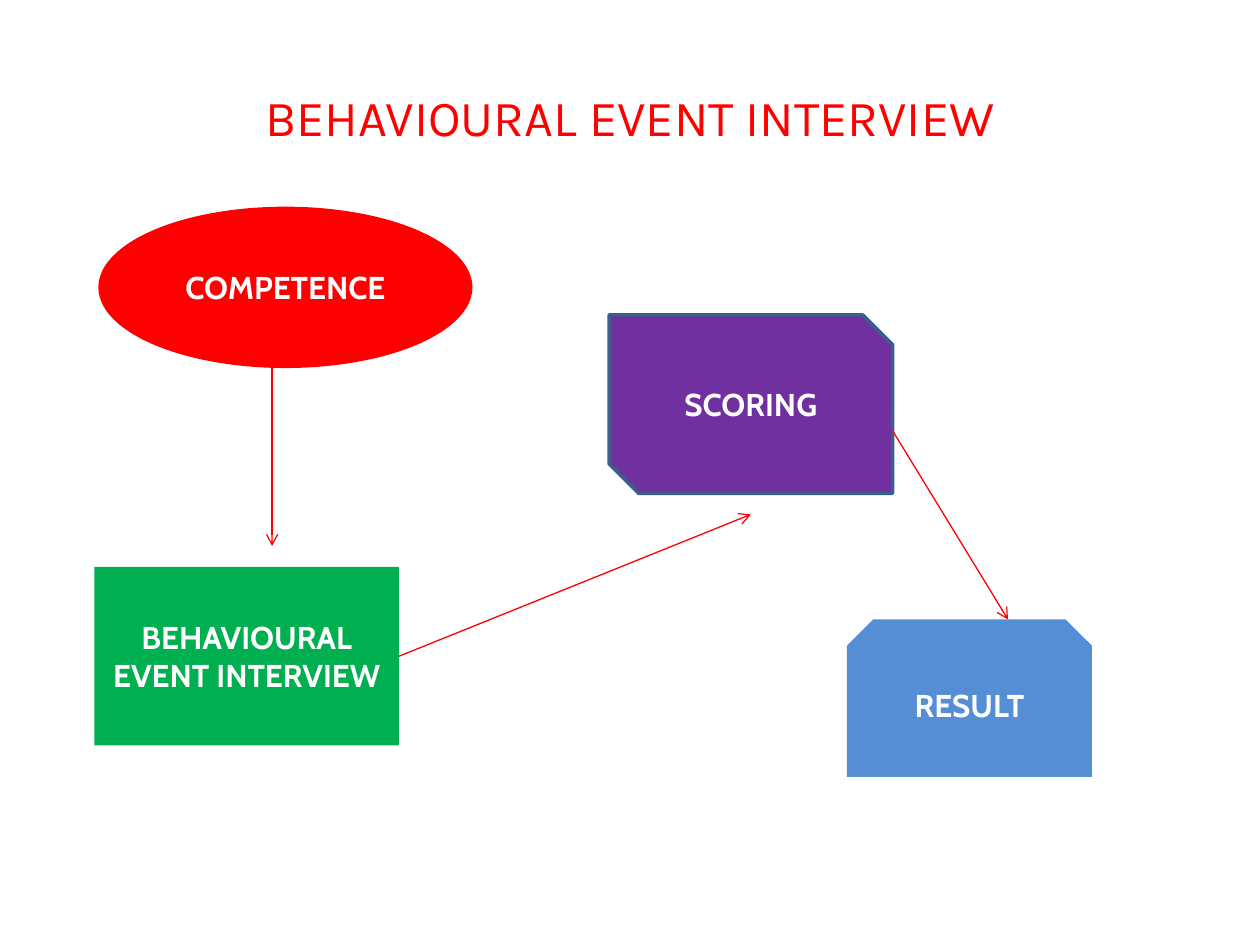
"""Build the behavioural event interview flow slide."""
from lxml import etree
from pptx import Presentation
from pptx.dml.color import RGBColor
from pptx.enum.shapes import MSO_CONNECTOR, MSO_SHAPE
from pptx.enum.text import MSO_ANCHOR, PP_ALIGN
from pptx.oxml.ns import qn
from pptx.util import Pt

LINE = MSO_CONNECTOR.STRAIGHT
OVAL, RECT = MSO_SHAPE.OVAL, MSO_SHAPE.RECTANGLE
DIAG, SNIP = MSO_SHAPE.SNIP_2_DIAG_RECTANGLE, MSO_SHAPE.SNIP_2_SAME_RECTANGLE
MIDDLE, CENTER = MSO_ANCHOR.MIDDLE, PP_ALIGN.CENTER
RIGHT = 3

THEME = {
    "red": "FF0000", "green": "00B050", "purple": "7030A0",
    "blue": "558ED5", "edge": "3A5F8C", "white": "FFFFFF",
    "title": {"name": "Karla", "size": Pt(28.8), "bold": False},
    "label": {"name": "Cabin", "size": Pt(18), "bold": True},
    "arrow": 0.75, "border": 2,
}

SIZE = (720, 540)
TITLE = ("BEHAVIOURAL EVENT INTERVIEW", (36, 21.6, 648, 90))
STEPS = [
    ("COMPETENCE", OVAL, (56.2, 118.1, 213.8, 92.2), "red", None),
    ("BEHAVIOURAL EVENT INTERVIEW", RECT, (54, 324, 174, 102), "green", None),
    ("SCORING", DIAG, (348, 180, 162, 102), "purple", "edge"),
    ("RESULT", SNIP, (484, 354, 140, 90), "blue", None),
]
ARROWS = [
    ((155.5, 210), (155.5, 312), None),
    ((228, 375), (429, 294), 1),
    ((510, 246), (576, 354), None),
]


def tint(name):
    return RGBColor.from_string(THEME[name])


def write(shape, text, style, color):
    frame = shape.text_frame
    frame.word_wrap = True
    frame.vertical_anchor = MIDDLE
    para = frame.paragraphs[0]
    para.alignment = CENTER
    run = para.add_run()
    run.text = text
    for key, value in THEME[style].items():
        setattr(run.font, key, value)
    run.font.color.rgb = tint(color)


def add_step(slide, text, kind, box, fill, edge):
    shape = slide.shapes.add_shape(kind, *map(Pt, box))
    shape.shadow.inherit = False
    shape.fill.solid()
    shape.fill.fore_color.rgb = tint(fill)
    if edge:
        shape.line.color.rgb = tint(edge)
        shape.line.width = Pt(THEME["border"])
    else:
        shape.line.fill.background()
    write(shape, text, "label", "white")
    return shape


def add_arrow(slide, start, end, source):
    line = slide.shapes.add_connector(LINE, *map(Pt, start + end))
    if source:
        line.begin_connect(source, RIGHT)
    line.line.color.rgb = tint("red")
    line.line.width = Pt(THEME["arrow"])
    props = line.line._get_or_add_ln()
    etree.SubElement(props, qn("a:tailEnd"), type="arrow")
    etree.SubElement(props.getparent(), qn("a:effectLst"))


def main():
    deck = Presentation()
    deck.slide_width, deck.slide_height = map(Pt, SIZE)
    slide = deck.slides.add_slide(deck.slide_layouts[6])
    text, box = TITLE
    write(slide.shapes.add_textbox(*map(Pt, box)), text, "title", "red")
    steps = [add_step(slide, *step) for step in STEPS]
    for start, end, index in ARROWS:
        add_arrow(slide, start, end, None if index is None else steps[index])
    deck.save("out.pptx")


if __name__ == "__main__":
    main()
